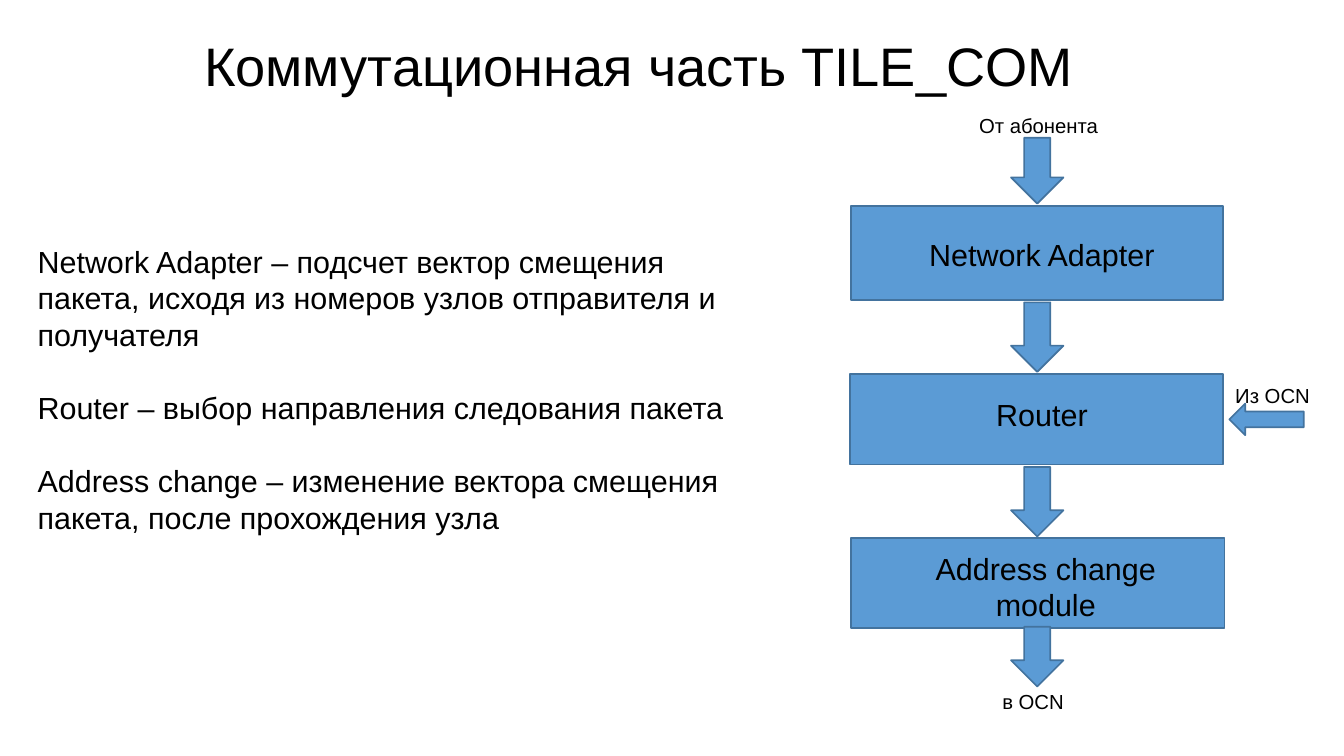
import pptx
import pptx.util
import pptx.dml.color
import pptx.enum.shapes
import pptx.enum.text

Inches, Pt = pptx.util.Inches, pptx.util.Pt
RGB = pptx.dml.color.RGBColor
KIND = pptx.enum.shapes.MSO_SHAPE
ALIGN = pptx.enum.text.PP_ALIGN
COLORS = {"fill": "5B9BD5", "line": "43739E", "text": "000000"}

deck = pptx.Presentation()
deck.slide_width, deck.slide_height = Inches(11.02), Inches(6.2)
slide = deck.slides.add_slide(deck.slide_layouts[6])


def add_block(kind, *place):
    block = slide.shapes.add_shape(kind, *map(Inches, place))
    block.shadow.inherit = False
    block.fill.solid()
    block.fill.fore_color.rgb = RGB.from_string(COLORS["fill"])
    block.line.color.rgb = RGB.from_string(COLORS["line"])
    block.line.width = Pt(1)


def add_text(lines, size, place, align=ALIGN.LEFT):
    """Add a text box with one paragraph per line, a line's height apart."""
    frame = slide.shapes.add_textbox(*map(Inches, place)).text_frame
    frame.word_wrap = True
    frame.text = "\n".join(lines)
    for index, para in enumerate(frame.paragraphs):
        para.alignment = align
        para.line_spacing = Pt(size * 1.2)
        para.space_before = Pt(size * 1.2 if index else 0)
        para.font.size = Pt(size)
        para.font.name = "Arial"
        para.font.color.rgb = RGB.from_string(COLORS["text"])
    return frame


title = add_text(["Коммутационная часть TILE_COM"], 32,
                 (0.28, 0.01, 9.92, 1.04), ALIGN.CENTER)
title.vertical_anchor = pptx.enum.text.MSO_ANCHOR.MIDDLE
title.margin_left = title.margin_right = 0
title.margin_top = title.margin_bottom = 0

# Stages of the packet path
for left, top, width, height in [
    (6.98, 1.69, 3.05, 0.77),
    (6.97, 3.07, 3.06, 0.74),
    (6.98, 4.41, 3.06, 0.74),
]:
    add_block(KIND.RECTANGLE, left, top, width, height)

add_text(["Network Adapter"], 18, (7.52, 1.89, 2.68, 0.4))
add_text(["Router"], 18, (8.07, 3.2, 1.02, 0.4))
add_text(["Address change module"], 18, (7.23, 4.46, 2.69, 0.71), ALIGN.CENTER)

# Flow between the stages
for top, height in [(1.13, 0.54), (2.48, 0.57), (3.83, 0.57), (5.14, 0.49)]:
    add_block(KIND.DOWN_ARROW, 8.29, top, 0.43, height)
add_block(KIND.LEFT_ARROW, 10.08, 3.31, 0.61, 0.26)

add_text([
    "Network Adapter – подсчет вектор смещения пакета, "
    "исходя из номеров узлов отправителя и получателя",
    "Router – выбор направления следования пакета",
    "Address change – изменение вектора смещения пакета, "
    "после прохождения узла",
], 18, (0.21, 1.94, 6.09, 2.52))

for label, place in [
    ("От абонента", (7.93, 0.88, 1.46, 0.3)),
    ("Из OCN", (10.03, 3.09, 0.81, 0.3)),
    ("в OCN", (8.12, 5.6, 1.22, 0.3)),
]:
    add_text([label], 12, place)

deck.save("out.pptx")
